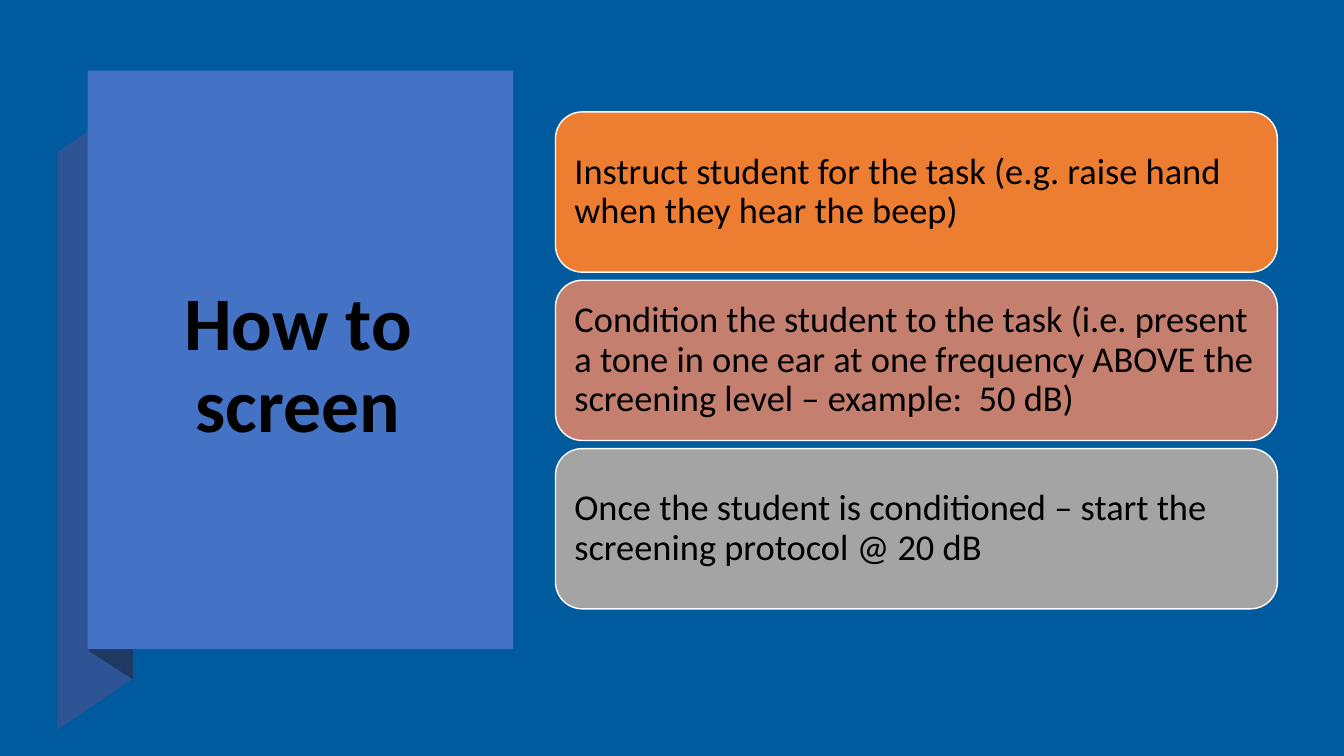
from pptx import Presentation
from pptx.dml.color import RGBColor
from pptx.enum.shapes import MSO_SHAPE
from pptx.enum.text import MSO_ANCHOR, MSO_AUTO_SIZE, PP_ALIGN
from pptx.util import Inches, Pt

TITLE = "How to screen"
STEPS = [
    ("Instruct student for the task (e.g. raise hand when they hear the beep)", "ED7D31"),
    ("Condition the student to the task (i.e. present a tone in one ear at one "
     "frequency ABOVE the screening level – example:  50 dB)", "C47F6E"),
    ("Once the student is conditioned – start the screening protocol @ 20 dB", "A4A4A4"),
]
FOLDS = [
    ([(0.57, 7.24), (1.32, 6.73), (1.32, 1), (0.57, 1.51)], "2F5496"),
    ([(0.88, 6.46), (1.32, 6.74), (1.32, 0.99), (0.88, 0.7)], "1F3864"),
]
STEP_LEFT, STEP_TOP, STEP_WIDTH, STEP_HEIGHT, STEP_PITCH = 5.51, 1.11, 7.16, 1.59, 1.67


def paint(fill, color):
    fill.solid()
    fill.fore_color.rgb = RGBColor.from_string(color)


def style_shape(sp, color, line=None):
    sp.shadow.inherit = False
    paint(sp.fill, color)
    if line:
        paint(sp.line.fill, line)
        sp.line.width = Pt(1)
    else:
        sp.line.fill.background()


def write(sp, text, size, align, bold=False):
    tf = sp.text_frame
    tf.text = text
    tf.word_wrap = True
    tf.auto_size = MSO_AUTO_SIZE.NONE
    tf.vertical_anchor = MSO_ANCHOR.MIDDLE
    p = tf.paragraphs[0]
    p.alignment = align
    p.line_spacing = 0.9
    p.font.name = "Calibri"
    p.font.size = Pt(size)
    p.font.bold = bold
    paint(p.font.fill, "000000")
    return tf


prs = Presentation()
prs.slide_width, prs.slide_height = Inches(13.33), Inches(7.5)
s = prs.slides.add_slide(prs.slide_layouts[5])
paint(s.background.fill, "005A9E")

for points, color in FOLDS:
    start, *rest = [(Inches(x), Inches(y)) for x, y in points]
    builder = s.shapes.build_freeform(*start)
    builder.add_line_segments(rest)
    style_shape(builder.convert_to_shape(), color)

panel = s.shapes.add_shape(MSO_SHAPE.RECTANGLE, Inches(0.87), Inches(0.7), Inches(4.22), Inches(5.74))
style_shape(panel, "4472C4")

title = s.shapes.title
title.left, title.top, title.width, title.height = map(Inches, (1.45, 1.67, 3.01, 3.94))
write(title, TITLE, 54, PP_ALIGN.CENTER, bold=True)
panel._element.addnext(title._element)

for i, (text, color) in enumerate(STEPS):
    sp = s.shapes.add_shape(MSO_SHAPE.ROUNDED_RECTANGLE, Inches(STEP_LEFT),
                            Inches(STEP_TOP + i * STEP_PITCH), Inches(STEP_WIDTH), Inches(STEP_HEIGHT))
    style_shape(sp, color, "FFFFFF")
    tf = write(sp, text, 26, PP_ALIGN.LEFT)
    tf.margin_left = tf.margin_right = tf.margin_top = tf.margin_bottom = Inches(0.11)

prs.save("out.pptx")
